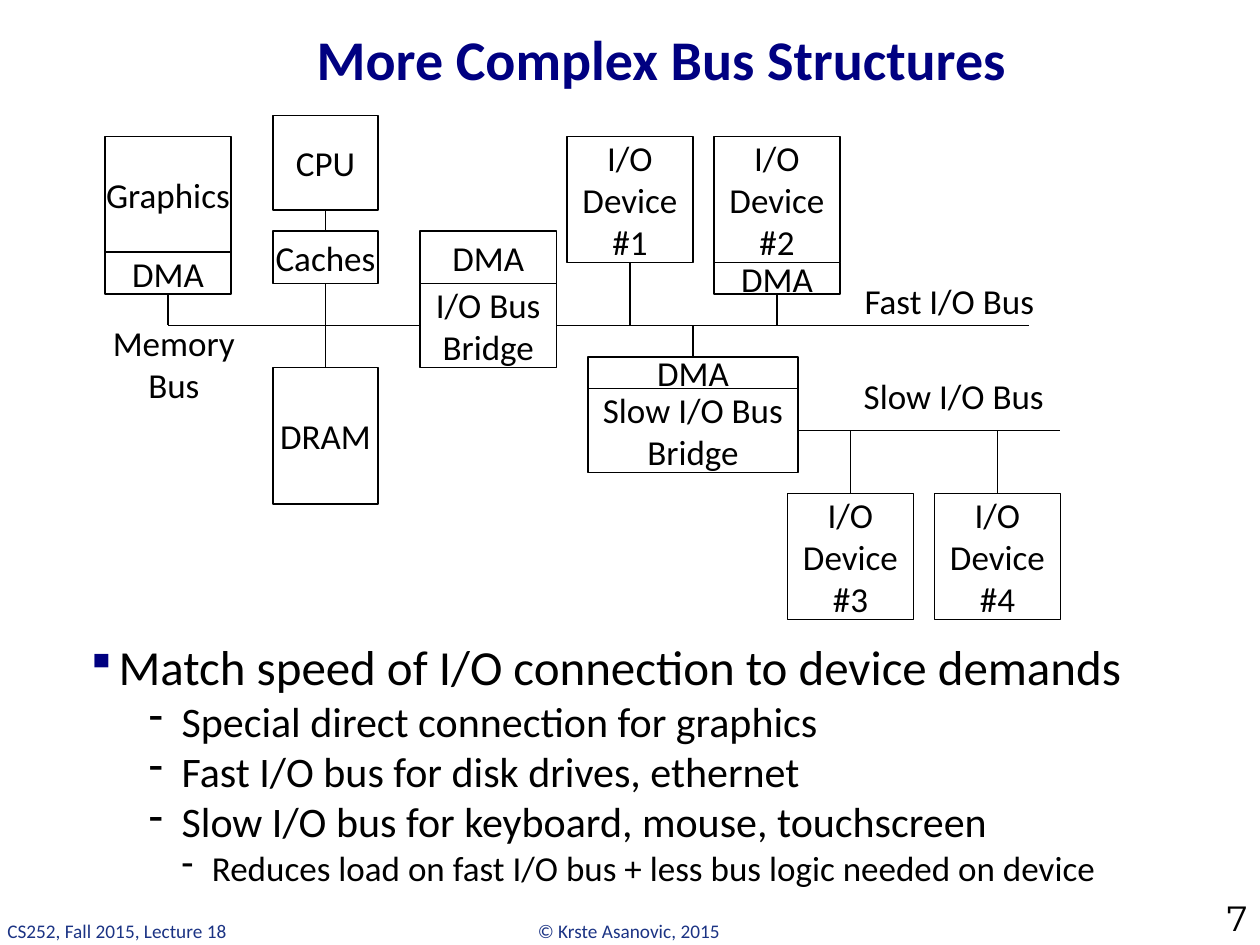
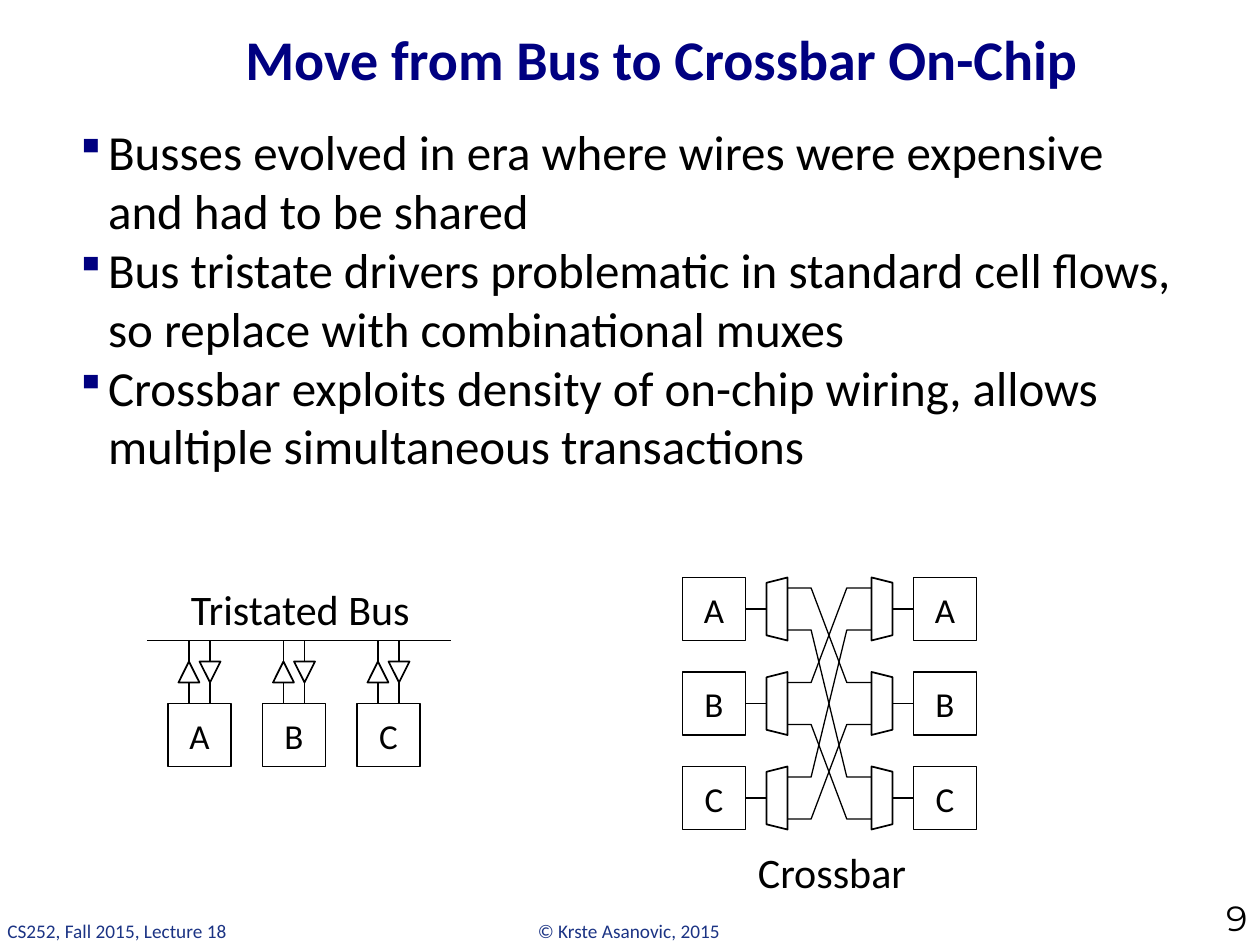
from lxml import etree
from pptx import Presentation
from pptx.dml.color import RGBColor
from pptx.enum.shapes import MSO_CONNECTOR, MSO_SHAPE
from pptx.enum.text import MSO_ANCHOR, MSO_AUTO_SIZE, PP_ALIGN
from pptx.oxml.ns import qn
from pptx.util import Inches, Pt

# Shared look
BLACK = RGBColor(0x00, 0x00, 0x00)
WHITE = RGBColor(0xFF, 0xFF, 0xFF)
TITLE_BLUE = RGBColor(0x00, 0x00, 0x81)
FOOTER_BLUE = RGBColor(0x1B, 0x33, 0x84)
BULLET_BLUE = "000080"
FONT = "Calibri"
NUMBER_FONT = "Montserrat"
TOP, LEFT, BOTTOM, RIGHT = range(4)

# Footers: text, left, width in inches
FOOTERS = [
    ("© Krste Asanovic, 2015", 4.17, 1.67),
    ("CS252, Fall 2015, Lecture 18", -0.04, 1.96),
]

# Bullet levels: size, left margin, hanging indent, mark, coloured mark
LEVELS = [
    (28, 0.26, 0.26, "▪", True),
    (24, 0.76, 0.26, "-", False),
    (20, 1.00, 0.24, "-", False),
]

# Diagram positions count cells of a grid of twelve to the inch
# Slide 7: name -> label, (left, top, width, height)
BUS_BOXES = {
    "cpu": ("CPU", (26, 11, 10, 9)),
    "caches": ("Caches", (26, 22, 10, 5)),
    "dram": ("DRAM", (26, 35, 10, 13)),
    "graphics": ("Graphics", (10, 13, 12, 11)),
    "graphics dma": ("DMA", (10, 24, 12, 4)),
    "bridge dma": ("DMA", (40, 22, 13, 5)),
    "bridge": ("I/O Bus Bridge", (40, 27, 13, 8)),
    "slow dma": ("DMA", (56, 34, 20, 3)),
    "slow bridge": ("Slow I/O Bus Bridge", (56, 37, 20, 8)),
    "device 1": ("I/O Device #1", (54, 13, 12, 12)),
    "device 2": ("I/O Device #2", (68, 13, 12, 12)),
    "device 2 dma": ("DMA", (68, 25, 12, 3)),
    "device 3": ("I/O Device #3", (75, 47, 12, 12)),
    "device 4": ("I/O Device #4", (89, 47, 12, 12)),
}
BOX_LINKS = [("cpu", "caches"), ("caches", "dram")]
# Buses start at the side of a bridge: box, side, far end x
BUSES = [("bridge", LEFT, 16), ("bridge", RIGHT, 98), ("slow bridge", RIGHT, 101)]
# Drops run from a box side straight to a bus: box, side, bus y
FAST_Y, SLOW_Y = 31, 41
DROPS = [
    ("graphics dma", BOTTOM, FAST_Y),
    ("device 1", BOTTOM, FAST_Y),
    ("device 2 dma", BOTTOM, FAST_Y),
    ("slow dma", TOP, FAST_Y),
    ("device 3", TOP, SLOW_Y),
    ("device 4", TOP, SLOW_Y),
]
# Label, left, top, width, height in inches
BUS_LABELS = [
    ("Memory Bus", 0.67, 2.5, 1.42, 0.77),
    ("Fast I/O Bus", 6.70, 2.17, 1.67, 0.44),
    ("Slow I/O Bus", 6.61, 2.92, 1.92, 0.44),
]
BUS_POINTS = [
    (0, "Match speed of I/O connection to device demands"),
    (1, "Special direct connection for graphics"),
    (1, "Fast I/O bus for disk drives, ethernet"),
    (1, "Slow I/O bus for keyboard, mouse, touchscreen"),
    (2, "Reduces load on fast I/O bus + less bus logic needed on device"),
]

# Slide 9
CROSSBAR_POINTS = [
    (0, "Busses evolved in era where wires were expensive and had to be shared"),
    (0, "Bus tristate drivers problematic in standard cell flows, "
        "so replace with combinational muxes"),
    (0, "Crossbar exploits density of on-chip wiring, "
        "allows multiple simultaneous transactions"),
]
UNITS = "ABC"
UNIT_STEP, UNIT_SIZE = 9, 6
TRISTATE_X, TRISTATE_Y, TRISTATE_BUS_Y = 16, 67, 61
CROSSBAR_Y = 55
# Each side: box left, mux centre x, mux rotation, box side facing the mux, mux back x
CROSSBAR_SIDES = [(65, 74, 270, RIGHT, 73), (87, 84, 90, LEFT, 85)]
WIRE_X = (75, 77.25, 80.65, 83)
# Wires join mux ports: (left row, port), (right row, port); port 0 upper, 1 lower
WIRES = [
    ((0, 0), (1, 0)), ((1, 1), (2, 1)), ((1, 0), (0, 0)),
    ((2, 1), (1, 1)), ((0, 1), (2, 0)), ((2, 0), (0, 1)),
]
PORT_Y = (56, 60)


def grid(*cells):
    return [Inches(cell / 12) for cell in cells]


# Text
def add_run(paragraph, words, size, color=BLACK, font=FONT, bold=False):
    run = paragraph.add_run()
    run.text = words
    run.font.size, run.font.name, run.font.bold = Pt(size), font, bold
    run.font.color.rgb = color


def add_label(slide, words, place, size, align=PP_ALIGN.LEFT, wrap=True, grow=False,
              anchor=MSO_ANCHOR.TOP, **style):
    frame = slide.shapes.add_textbox(*place).text_frame
    frame.word_wrap = wrap
    frame.vertical_anchor = anchor
    frame.auto_size = MSO_AUTO_SIZE.SHAPE_TO_FIT_TEXT if grow else MSO_AUTO_SIZE.NONE
    frame.paragraphs[0].alignment = align
    add_run(frame.paragraphs[0], words, size, **style)


def add_points(slide, points, place):
    frame = slide.shapes.add_textbox(*place).text_frame
    frame.word_wrap = True
    for i, (level, words) in enumerate(points):
        size, margin, hang, mark, colored = LEVELS[level]
        paragraph = frame.add_paragraph() if i else frame.paragraphs[0]
        paragraph.level = level
        add_run(paragraph, words, size)
        props = paragraph._p.get_or_add_pPr()
        props.set("marL", str(Inches(margin)))
        props.set("indent", str(-Inches(hang)))
        if colored:
            color = etree.SubElement(props, qn("a:buClr"))
            etree.SubElement(color, qn("a:srgbClr"), val=BULLET_BLUE)
            etree.SubElement(props, qn("a:buSzPct"), val="85000")
        etree.SubElement(props, qn("a:buChar"), char=mark)


# Shapes
def add_outlined(shapes, kind, cells, rotation=0):
    shape = shapes.add_shape(kind, *grid(*cells))
    shape.shadow.inherit = False
    shape.fill.solid()
    shape.fill.fore_color.rgb = WHITE
    shape.line.color.rgb = BLACK
    shape.line.width = Pt(1)
    shape.rotation = rotation
    return shape


def add_box(shapes, label, cells):
    box = add_outlined(shapes, MSO_SHAPE.RECTANGLE, cells)
    frame = box.text_frame
    frame.word_wrap = True
    frame.vertical_anchor = MSO_ANCHOR.MIDDLE
    frame.margin_left = frame.margin_top = frame.margin_right = frame.margin_bottom = 0
    frame.paragraphs[0].alignment = PP_ALIGN.CENTER
    add_run(frame.paragraphs[0], label, 20)
    return box


def add_wire(shapes, start, end, begin=None, finish=None):
    """Draw a line; begin and finish are (box, side) to join."""
    wire = shapes.add_connector(MSO_CONNECTOR.STRAIGHT, *grid(*start, *end))
    wire.line.color.rgb = BLACK
    wire.line.width = Pt(1)
    etree.SubElement(wire._element.spPr, qn("a:effectLst"))
    if begin:
        wire.begin_connect(*begin)
    if finish:
        wire.end_connect(*finish)


def side_point(cells, side):
    x, y, w, h = cells
    return [(x + w / 2, y), (x, y + h / 2), (x + w / 2, y + h), (x + w, y + h / 2)][side]


def start_slide(deck, title, number):
    slide = deck.slides.add_slide(deck.slide_layouts[6])
    for words, left, width in FOOTERS:
        place = [Inches(v) for v in (left, 7.25, width, 0.29)]
        add_label(slide, words, place, 11, wrap=False, grow=True, color=FOOTER_BLUE)
    add_label(slide, title, grid(16, 1, 94, 9), 32, PP_ALIGN.CENTER,
              anchor=MSO_ANCHOR.MIDDLE, color=TITLE_BLUE, bold=True)
    add_label(slide, number, [Inches(v) for v in (9.08, 7.24, 0.92, 0.26)], 20,
              PP_ALIGN.RIGHT, anchor=MSO_ANCHOR.BOTTOM, font=NUMBER_FONT)
    return slide


def build_bus_slide(deck):
    slide = start_slide(deck, "More Complex Bus Structures", "7")
    shapes = slide.shapes
    boxes = {name: add_box(shapes, *box) for name, box in BUS_BOXES.items()}

    # Buses and the lines that reach them
    for upper, lower in BOX_LINKS:
        add_wire(shapes, side_point(BUS_BOXES[upper][1], BOTTOM),
                 side_point(BUS_BOXES[lower][1], TOP),
                 (boxes[upper], BOTTOM), (boxes[lower], TOP))
    for name, side, far_x in BUSES:
        start = side_point(BUS_BOXES[name][1], side)
        add_wire(shapes, start, (far_x, start[1]), (boxes[name], side))
    for name, side, bus_y in DROPS:
        start = side_point(BUS_BOXES[name][1], side)
        add_wire(shapes, start, (start[0], bus_y), (boxes[name], side))

    for words, *place in BUS_LABELS:
        add_label(slide, words, [Inches(v) for v in place], 20, PP_ALIGN.CENTER, grow=True)
    add_points(slide, BUS_POINTS, grid(7, 60, 108, 27))


def add_tristate_unit(shapes, label, x):
    unit = shapes.add_group_shape().shapes
    add_box(unit, label, (x, TRISTATE_Y, UNIT_SIZE, UNIT_SIZE))
    for driver_x, rotation in ((x + 1, 0), (x + 3, 180)):
        driver_y = TRISTATE_BUS_Y + 2
        add_outlined(unit, MSO_SHAPE.ISOSCELES_TRIANGLE, (driver_x, driver_y, 2, 2), rotation)
        for y in (TRISTATE_BUS_Y, driver_y + 2):
            add_wire(unit, (driver_x + 1, y), (driver_x + 1, y + 2))


def add_crossbar_wire(shapes, source, target):
    (y1, y2) = (PORT_Y[port] + UNIT_STEP * row for row, port in (source, target))
    points = [tuple(grid(x, y)) for x, y in zip(WIRE_X, (y1, y1, y2, y2))]
    builder = shapes.build_freeform(*points[0])
    builder.add_line_segments(points[1:], close=False)
    wire = builder.convert_to_shape()
    wire.shadow.inherit = False
    wire.fill.background()
    wire.line.color.rgb = BLACK
    wire.line.width = Pt(0.75)


def build_crossbar_slide(deck):
    slide = start_slide(deck, "Move from Bus to Crossbar On-Chip", "9")
    shapes = slide.shapes
    add_points(slide, CROSSBAR_POINTS, grid(6, 11, 108, 40))

    # Tristated bus
    for i, label in enumerate(UNITS):
        add_tristate_unit(shapes, label, TRISTATE_X + UNIT_STEP * i)
    add_wire(shapes, (14, TRISTATE_BUS_Y), (43, TRISTATE_BUS_Y))
    add_label(slide, "Tristated Bus", grid(17, 55, 23.9, 6), 24, wrap=False, grow=True)

    # Crossbar
    for i, label in enumerate(UNITS):
        y = CROSSBAR_Y + UNIT_STEP * i
        for box_x, mux_x, rotation, side, back_x in CROSSBAR_SIDES:
            cells = (box_x, y, UNIT_SIZE, UNIT_SIZE)
            box = add_box(shapes, label, cells)
            add_outlined(shapes, MSO_SHAPE.TRAPEZOID, (mux_x - 3, y + 2, 6, 2), rotation)
            add_wire(shapes, side_point(cells, side), (back_x, y + 3), (box, side))
    for source, target in WIRES:
        add_crossbar_wire(shapes, source, target)
    add_label(slide, "Crossbar", grid(71, 80, 16.7, 6), 24, wrap=False, grow=True)


def main():
    deck = Presentation()
    deck.slide_width, deck.slide_height = Inches(10), Inches(7.5)
    build_bus_slide(deck)
    build_crossbar_slide(deck)
    deck.save("out.pptx")


if __name__ == "__main__":
    main()
